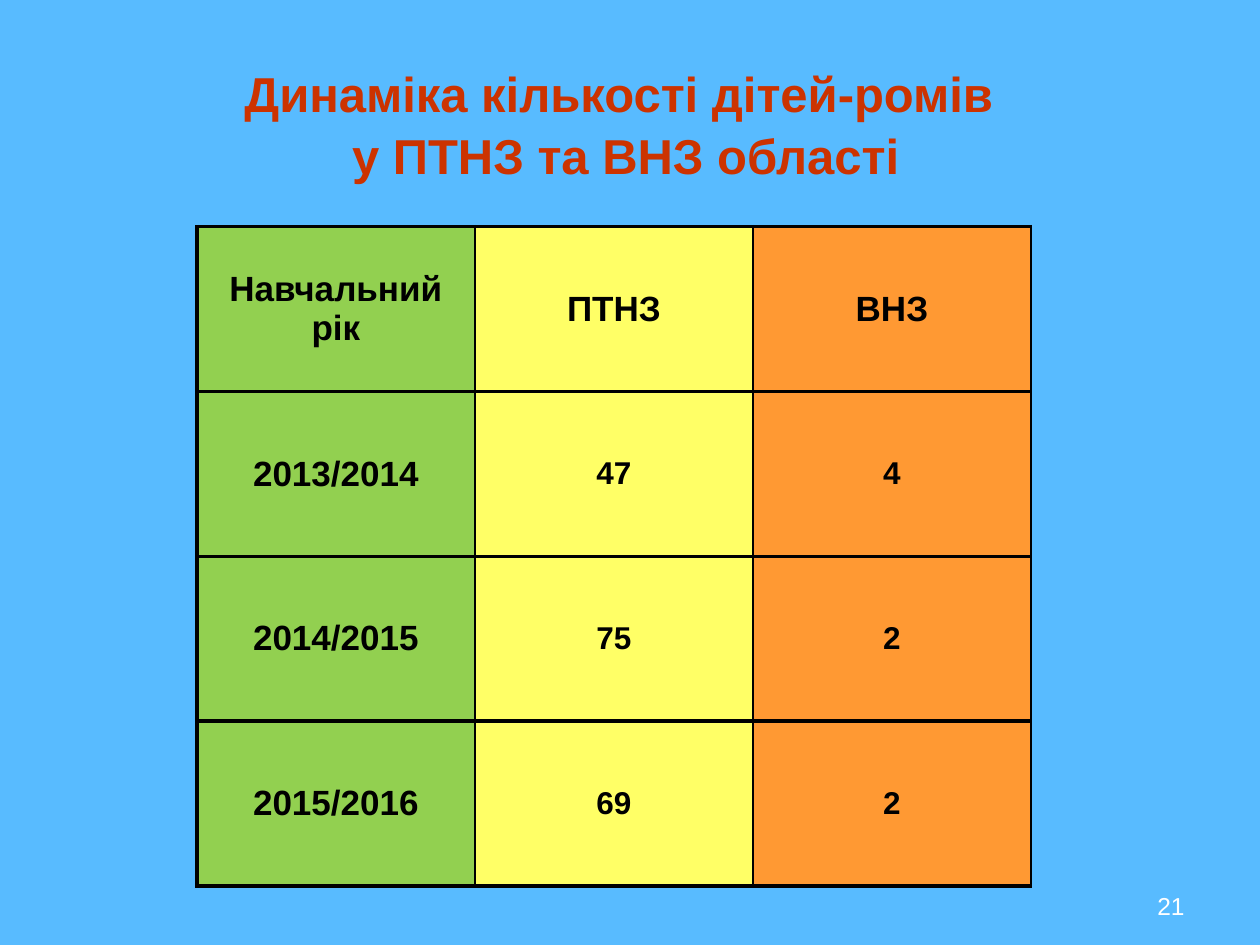
from lxml.etree import SubElement
from pptx import Presentation
from pptx.dml.color import RGBColor as RGB
from pptx.enum.text import MSO_ANCHOR as Anchor, PP_ALIGN as Align
from pptx.oxml.ns import qn
from pptx.util import Pt

HUE = {
    "back": "58BBFF", "title": "CC3300", "text": "000000", "line": "000000",
    "year": "92D050", "school": "FFFF66", "college": "FF9933", "page": "FFFFFF",
}


def write(frame, text, size=20, color="text", bold=True, align=Align.CENTER, gap=None):
    para = frame.paragraphs[0]
    para.text = text
    para.alignment = align
    para.line_spacing = gap
    for run in para.runs:
        font = run.font
        font.name = "Arial"
        font.size = Pt(size)
        font.bold = bold
        font.color.rgb = RGB.from_string(HUE[color])


def edge(cell, side, width):
    """Draw one solid border of a table cell."""
    props = cell._tc.get_or_add_tcPr()
    line = SubElement(props, qn(f"a:{side}"), w=str(Pt(width)))
    fill = SubElement(line, qn("a:solidFill"))
    SubElement(fill, qn("a:srgbClr"), val=HUE["line"])


deck = Presentation()
deck.slide_width, deck.slide_height = Pt(720), Pt(540)
slide = deck.slides.add_slide(deck.slide_layouts[5])
slide.background.fill.solid()
slide.background.fill.fore_color.rgb = RGB.from_string(HUE["back"])

# Title
title = slide.shapes.title
title.left, title.top, title.width, title.height = Pt(31), Pt(21.6), Pt(653), Pt(96.5)
title.text_frame.vertical_anchor = Anchor.MIDDLE
write(title.text_frame, "Динаміка кількості дітей-ромів \vу ПТНЗ та ВНЗ області",
      size=28, color="title", gap=1.05)

# Table of pupils by school year
rows = [
    ("Навчальний рік", "ПТНЗ", "ВНЗ"),
    ("2013/2014", "47", "4"),
    ("2014/2015", "75", "2"),
    ("2015/2016", "69", "2"),
]
fills = ("year", "school", "college")
wide, high = 158.9, 94.2
table = slide.shapes.add_table(
    len(rows), len(fills), Pt(112.5), Pt(129.5),
    Pt(wide * len(fills)), Pt(high * len(rows))).table
for col in table.columns:
    col.width = Pt(wide)
for r, row in enumerate(rows):
    table.rows[r].height = Pt(high)
    for c, text in enumerate(row):
        cell = table.cell(r, c)
        for side, width in (("lnL", 1 if c else 2.25), ("lnR", 1),
                            ("lnT", 2.25), ("lnB", 2.25)):
            edge(cell, side, width)
        cell.fill.solid()
        cell.fill.fore_color.rgb = RGB.from_string(HUE[fills[c]])
        cell.vertical_anchor = Anchor.MIDDLE
        write(cell.text_frame, text, size=18 if r and c else 20)

# Page number
page = slide.shapes.add_textbox(Pt(516), Pt(492), Pt(168), Pt(37.5)).text_frame
page.word_wrap = True
page.vertical_anchor = Anchor.BOTTOM
write(page, "21", size=14, color="page", bold=False, align=Align.RIGHT)

deck.save("out.pptx")
